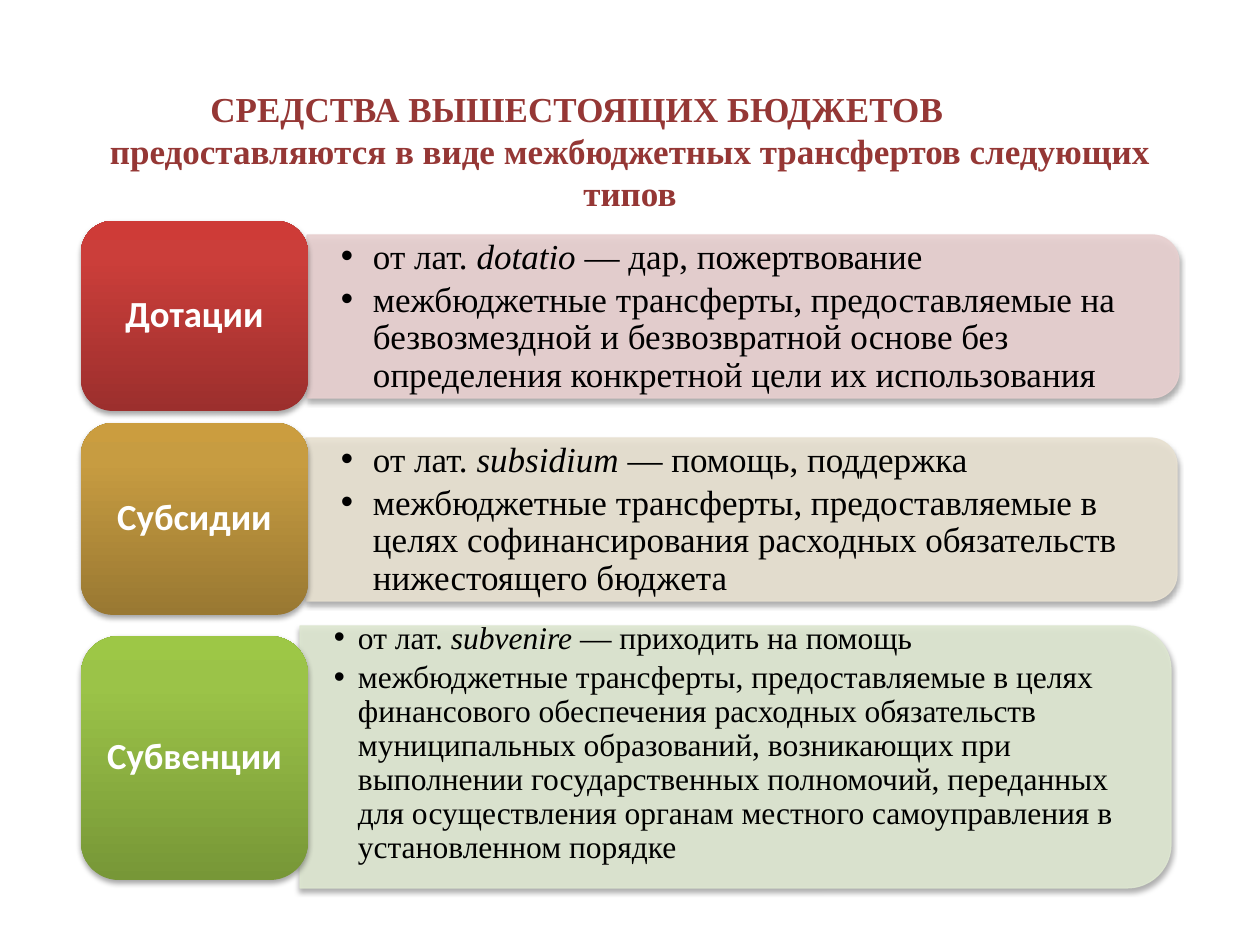
"""Build the slide on the three types of interbudgetary transfers."""
from copy import deepcopy

from pptx import Presentation
from pptx.dml.color import RGBColor
from pptx.enum.shapes import MSO_SHAPE
from pptx.enum.text import MSO_ANCHOR, PP_ALIGN
from pptx.oxml import parse_xml
from pptx.oxml.ns import nsdecls, qn
from pptx.util import Pt

PX = 914400 / 126
WHITE = RGBColor(0xFF, 0xFF, 0xFF)
BLACK = RGBColor(0x00, 0x00, 0x00)
TITLE_RED = RGBColor(0x95, 0x37, 0x35)
RED_PANEL = RGBColor(0xE8, 0xD0, 0xD0)
RED_STOPS = [RGBColor(0x9C, 0x2F, 0x2D), RGBColor(0xCB, 0x3E, 0x3A), RGBColor(0xCE, 0x3B, 0x37)]
GOLD_PANEL = RGBColor(0xE8, 0xE1, 0xD1)
GOLD_STOPS = [RGBColor(0x99, 0x78, 0x32), RGBColor(0xC7, 0x9C, 0x41), RGBColor(0xCB, 0x9D, 0x3F)]
GREEN_PANEL = RGBColor(0xDE, 0xE7, 0xD1)
GREEN_STOPS = [RGBColor(0x77, 0x97, 0x37), RGBColor(0x9B, 0xC3, 0x48), RGBColor(0x9D, 0xC7, 0x46)]
SERIF = "Times New Roman"
LABEL_LEFT, LABEL_WIDTH = 81, 227

TRANSFERS = [
    dict(label="Дотации", label_y=(221, 190), stops=RED_STOPS, color=RED_PANEL,
         panel=(307, 235, 872, 163), text=(307, 243, 864, 148), size=20, indent=32,
         origin=("от лат. ", "dotatio", " — дар, пожертвование"),
         meaning="межбюджетные трансферты, предоставляемые на безвозмездной и "
                 "безвозвратной основе без определения конкретной цели их использования"),
    dict(label="Субсидии", label_y=(423, 192), stops=GOLD_STOPS, color=GOLD_PANEL,
         panel=(306, 438, 871, 163), text=(307, 446, 862, 148), size=20, indent=32,
         origin=("от лат. ", "subsidium", " — помощь, поддержка"),
         meaning="межбюджетные трансферты, предоставляемые в целях "
                 "софинансирования расходных обязательств нижестоящего бюджета"),
    dict(label="Субвенции", label_y=(636, 244), stops=GREEN_STOPS, color=GREEN_PANEL,
         panel=(300, 626, 871, 262), text=(300, 621, 858, 245), size=18, indent=24,
         origin=("от лат. ", "subvenire", " — приходить на помощь"),
         meaning="межбюджетные трансферты, предоставляемые в целях финансового "
                 "обеспечения расходных обязательств муниципальных образований, "
                 "возникающих при выполнении государственных полномочий, переданных "
                 "для осуществления органам местного самоуправления в установленном порядке"),
]


def px(*lengths):
    return [round(n * PX) for n in lengths]


def add_shadow(s):
    s.shadow.inherit = False
    s._element.spPr.find(qn("a:effectLst")).append(parse_xml(
        f'<a:outerShdw {nsdecls("a")} blurRad="39370" dist="22860" dir="5400000" '
        'rotWithShape="0"><a:srgbClr val="000000"><a:alpha val="35000"/>'
        '</a:srgbClr></a:outerShdw>'))


prs = Presentation()
prs.slide_width, prs.slide_height = px(1260, 945)
slide = prs.slides.add_slide(prs.slide_layouts[6])

tf = slide.shapes.add_textbox(*px(63, 76, 1134, 149)).text_frame
tf.word_wrap = True
tf.vertical_anchor = MSO_ANCHOR.MIDDLE
for i, line in enumerate(("СРЕДСТВА ВЫШЕСТОЯЩИХ БЮДЖЕТОВ",
                          "предоставляются в виде межбюджетных трансфертов следующих типов")):
    p = tf.paragraphs[0] if i == 0 else tf.add_paragraph()
    p.alignment = PP_ALIGN.CENTER if i else PP_ALIGN.LEFT
    if i == 0:
        p._p.get_or_add_pPr().set("marL", str(px(135)[0]))
    r = p.add_run()
    r.text = line
    r.font.name, r.font.size, r.font.bold = SERIF, Pt(20), True
    r.font.color.rgb = TITLE_RED

for t in TRANSFERS:
    x, y, w, h = t["panel"]
    s = slide.shapes.add_shape(MSO_SHAPE.ROUND_2_SAME_RECTANGLE,
                               *px(x + (w - h) / 2, y + (h - w) / 2, h, w))
    s.rotation = 90
    s.fill.solid()
    s.fill.fore_color.rgb = t["color"]
    s.line.color.rgb = t["color"]
    s.line.width = Pt(0.75)
    for color in s._element.spPr.iter(qn("a:srgbClr")):
        color.append(parse_xml(f'<a:alpha {nsdecls("a")} val="90000"/>'))
    add_shadow(s)

    tf = slide.shapes.add_textbox(*px(*t["text"])).text_frame
    tf.word_wrap = True
    tf.vertical_anchor = MSO_ANCHOR.MIDDLE
    tf.margin_left = tf.margin_right = px(34)[0]
    tf.margin_top = tf.margin_bottom = 0
    for i, runs in enumerate((t["origin"], (t["meaning"],))):
        p = tf.paragraphs[0] if i == 0 else tf.add_paragraph()
        p.line_spacing = 0.9
        p.space_after = Pt(3)
        pPr = p._p.get_or_add_pPr()
        indent = px(t["indent"])[0]
        pPr.set("marL", str(indent))
        pPr.set("indent", str(-indent))
        pPr.append(parse_xml(f'<a:buFont {nsdecls("a")} typeface="Arial"/>'))
        pPr.append(parse_xml(f'<a:buChar {nsdecls("a")} char="•"/>'))
        for j, text in enumerate(runs):
            r = p.add_run()
            r.text = text
            r.font.name, r.font.size, r.font.italic = SERIF, Pt(t["size"]), j == 1
            r.font.color.rgb = BLACK

    top, height = t["label_y"]
    s = slide.shapes.add_shape(MSO_SHAPE.ROUNDED_RECTANGLE,
                               *px(LABEL_LEFT, top, LABEL_WIDTH, height))
    s.fill.gradient()
    s.fill.gradient_angle = 90
    last = s._element.spPr.findall(".//" + qn("a:gs"))[-1]
    last.addnext(deepcopy(last))
    for stop, color, position in zip(s.fill.gradient_stops, t["stops"], (0, 0.8, 1)):
        stop.color.rgb = color
        stop.position = position
    s.line.fill.background()
    add_shadow(s)
    tf = s.text_frame
    tf.word_wrap = True
    tf.vertical_anchor = MSO_ANCHOR.MIDDLE
    tf.margin_left = tf.margin_right = tf.margin_top = tf.margin_bottom = 0
    p = tf.paragraphs[0]
    p.alignment = PP_ALIGN.CENTER
    p.line_spacing = 0.9
    r = p.add_run()
    r.text = t["label"]
    r.font.name, r.font.size, r.font.bold = "Calibri", Pt(21), True
    r.font.color.rgb = WHITE

prs.save("out.pptx")
